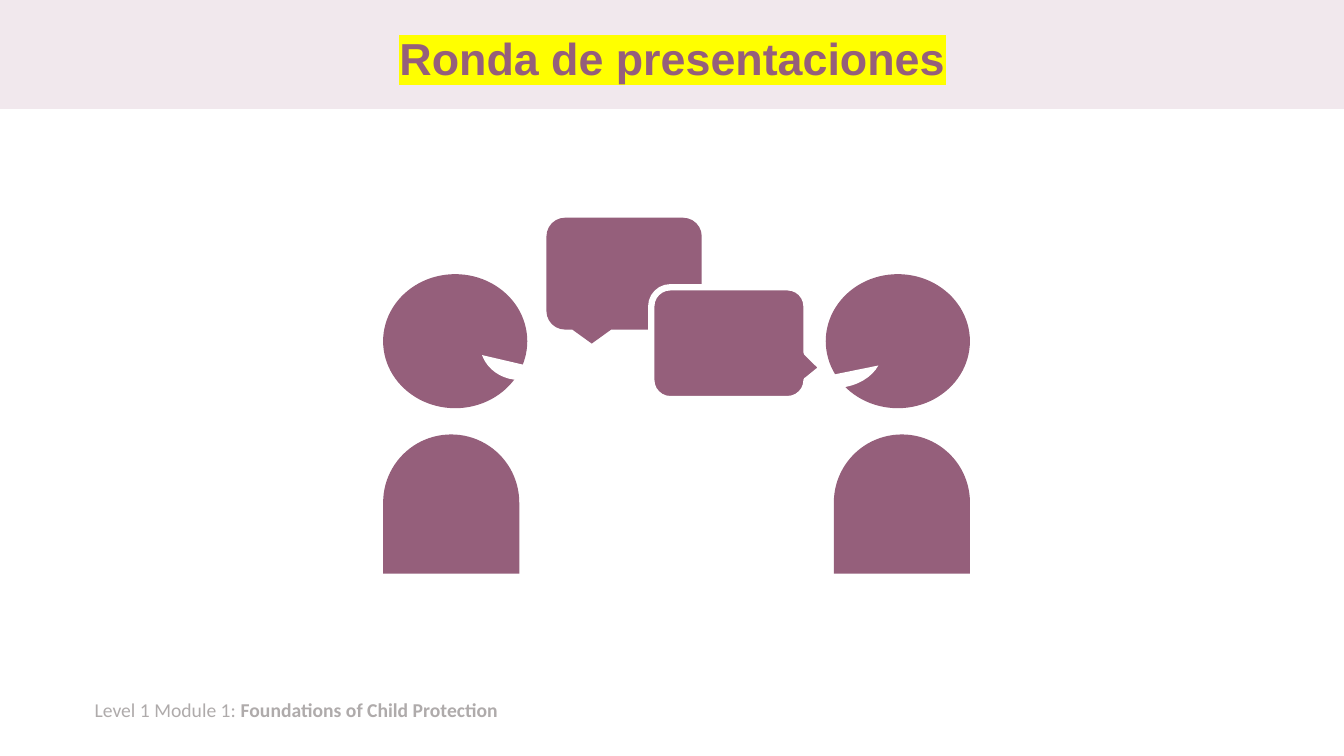
from dataclasses import dataclass

from lxml import etree
from pptx import Presentation
from pptx.dml.color import RGBColor
from pptx.enum.shapes import MSO_SHAPE
from pptx.enum.text import MSO_ANCHOR, PP_ALIGN
from pptx.oxml.ns import qn
from pptx.slide import Slide
from pptx.text.text import _Run
from pptx.util import Inches, Pt

RECTANGLE = MSO_SHAPE.RECTANGLE
OVAL = MSO_SHAPE.OVAL
TORSO = MSO_SHAPE.ROUND_2_SAME_RECTANGLE
CHORD = MSO_SHAPE.CHORD
SPEECH_BUBBLE = MSO_SHAPE.ROUNDED_RECTANGULAR_CALLOUT
MIDDLE = MSO_ANCHOR.MIDDLE
CENTER = PP_ALIGN.CENTER
TITLE_ONLY = 5


@dataclass(frozen=True)
class Theme:
    plum: str = "955F7B"
    blush: str = "F1E8ED"
    white: str = "FFFFFF"
    grey: str = "AFABAB"
    yellow: str = "FFFF00"
    title_font: str = "Arial"
    footer_font: str = "Calibri"
    title_size: int = 32
    footer_size: int = 14
    outline: float = 4.5


THEME = Theme()


@dataclass(frozen=True)
class Figure:
    kind: MSO_SHAPE
    left: float
    top: float
    width: float
    height: float
    fill: str = THEME.plum
    adjustments: tuple[float, ...] = ()
    outline: str | None = None


@dataclass(frozen=True)
class Person:
    head_left: float
    body_left: float


PEOPLE = (Person(3.8, 3.8), Person(8.19, 8.27))
BAND = Figure(RECTANGLE, 0, 0, 13.33, 1.08, THEME.blush)
MOUTHS = (
    Figure(CHORD, 4.76, 3.04, 0.78, 0.73, THEME.white, (27, 97.34)),
    Figure(CHORD, 7.79, 3.12, 0.96, 0.73, THEME.white, (10.66, 81)),
)
BUBBLES = (
    Figure(SPEECH_BUBBLE, 5.42, 2.16, 1.54, 1.11),
    Figure(SPEECH_BUBBLE, 6.46, 2.85, 1.54, 1.11,
           adjustments=(0.6, 0.22, 0.17), outline=THEME.white),
)


def draw_figure(page: Slide, figure: Figure) -> None:
    shape = page.shapes.add_shape(
        figure.kind, Inches(figure.left), Inches(figure.top),
        Inches(figure.width), Inches(figure.height))
    shape.shadow.inherit = False
    shape.fill.solid()
    shape.fill.fore_color.rgb = RGBColor.from_string(figure.fill)
    for index, value in enumerate(figure.adjustments):
        shape.adjustments[index] = value
    if figure.outline:
        shape.line.color.rgb = RGBColor.from_string(figure.outline)
        shape.line.width = Pt(THEME.outline)
    else:
        shape.line.fill.background()


def draw_person(page: Slide, person: Person) -> None:
    draw_figure(page, Figure(OVAL, person.head_left, 2.72, 1.43, 1.33))
    draw_figure(page, Figure(TORSO, person.body_left, 4.31, 1.35, 1.38,
                             adjustments=(0.5, 0)))


def format_span(span: _Run, font: str, size: int, color: str, bold: bool) -> None:
    span.font.name = font
    span.font.size = Pt(size)
    span.font.bold = bold
    span.font.color.rgb = RGBColor.from_string(color)


def highlight_span(span: _Run, color: str) -> None:
    highlight = etree.Element(qn("a:highlight"))
    etree.SubElement(highlight, qn("a:srgbClr")).set("val", color)
    span.font._element.find(qn("a:solidFill")).addnext(highlight)


def write_footer(page: Slide) -> None:
    box = page.shapes.add_textbox(Inches(0.84), Inches(6.87), Inches(11.35), Inches(0.34))
    box.text_frame.word_wrap = True
    para = box.text_frame.paragraphs[0]
    for text, bold in (("Level 1 Module 1: ", False),
                       ("Foundations of Child Protection", True)):
        span = para.add_run()
        span.text = text
        format_span(span, THEME.footer_font, THEME.footer_size, THEME.grey, bold)


def write_title(page: Slide) -> None:
    title = page.shapes.title
    title.left, title.top = Inches(0.92), Inches(0.13)
    title.width, title.height = Inches(11.5), Inches(0.95)
    frame = title.text_frame
    frame.text = "Ronda de presentaciones"
    frame.word_wrap = True
    frame.vertical_anchor = MIDDLE
    para = frame.paragraphs[0]
    para.alignment = CENTER
    para.line_spacing = 0.9
    span = para.runs[0]
    format_span(span, THEME.title_font, THEME.title_size, THEME.plum, True)
    highlight_span(span, THEME.yellow)
    page.shapes._spTree.append(title._element)


def main() -> None:
    deck = Presentation()
    deck.slide_width, deck.slide_height = Inches(13.33), Inches(7.5)
    page = deck.slides.add_slide(deck.slide_layouts[TITLE_ONLY])
    write_footer(page)
    draw_figure(page, BAND)
    for person in PEOPLE:
        draw_person(page, person)
    for figure in MOUTHS + BUBBLES:
        draw_figure(page, figure)
    write_title(page)
    deck.save("out.pptx")


if __name__ == "__main__":
    main()
